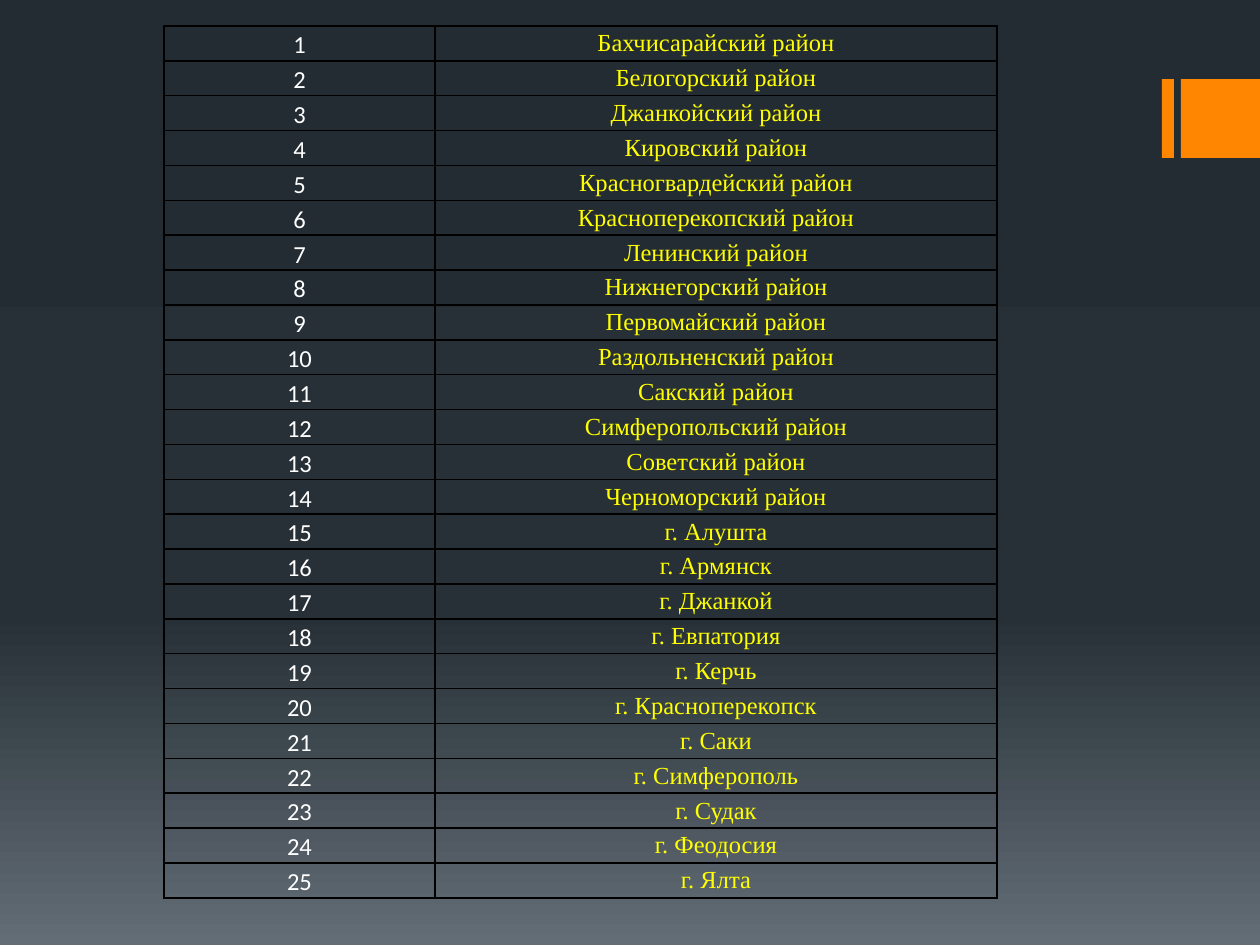
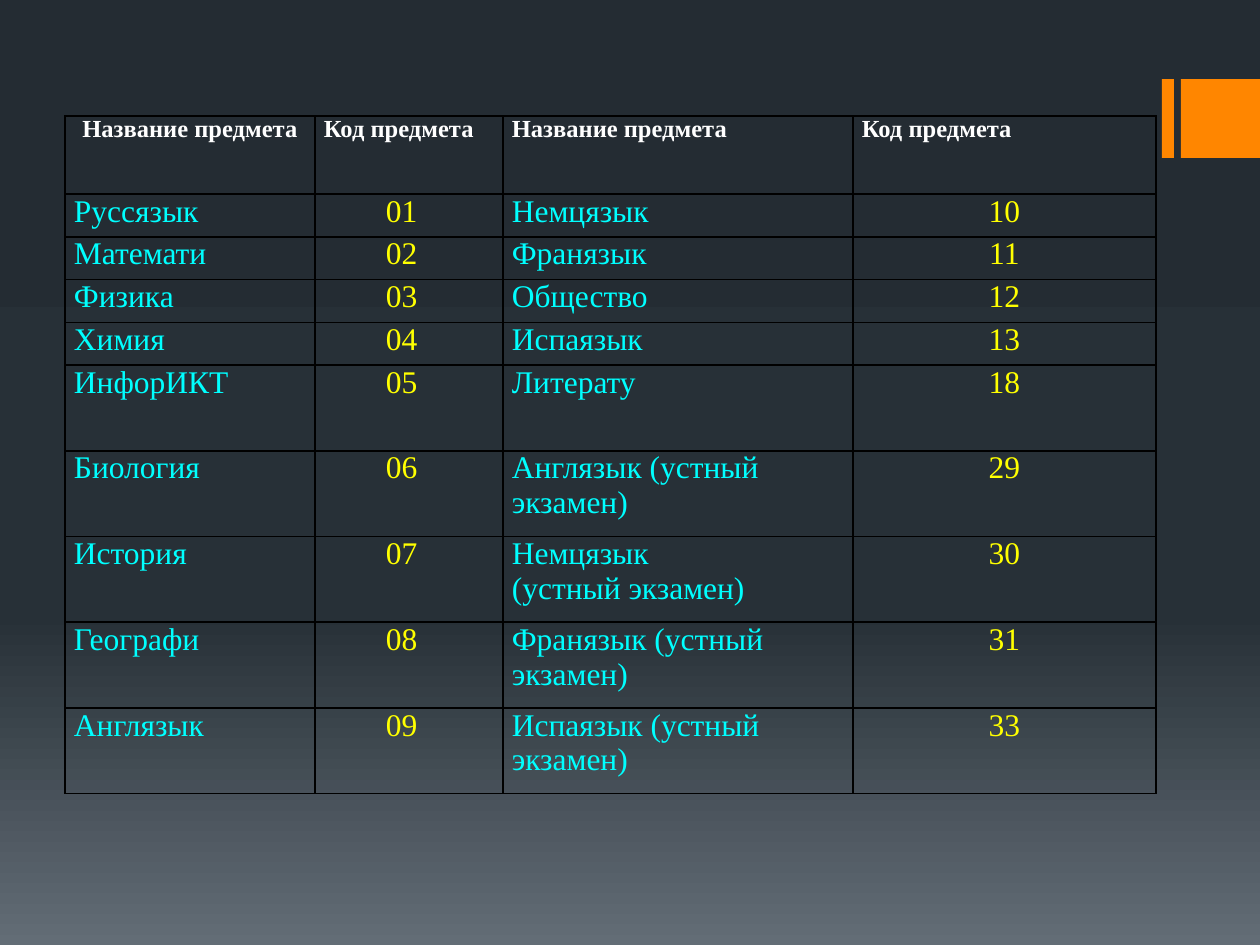
from dataclasses import dataclass

from lxml.etree import SubElement
from pptx import Presentation
from pptx.dml.color import RGBColor
from pptx.enum.shapes import MSO_SHAPE
from pptx.enum.text import PP_ALIGN
from pptx.oxml import parse_xml
from pptx.oxml.ns import nsdecls, qn
from pptx.util import Pt

EMU_PER_PX = 914400 / 126


def px(n):
    return round(n * EMU_PER_PX)


# Shared colours, fonts and sizes
@dataclass(frozen=True)
class Theme:
    backdrop: tuple = ((0, "242C33"), (65, "273037"), (100, "636D76"))
    accent: str = "FF8600"
    border: str = "000000"
    white: str = "FFFFFF"
    yellow: str = "FFFF00"
    cyan: str = "00FFFF"
    sans: str = "Calibri"
    serif: str = "Times New Roman"
    small: int = 14
    large: int = 18


THEME = Theme()


@dataclass(frozen=True)
class TextStyle:
    color: str
    font: str = THEME.serif
    size: int = THEME.small
    bold: bool = False
    align: PP_ALIGN = PP_ALIGN.CENTER
    spacing: float = 1.0
    indent: int = 0


NUMBER = TextStyle(THEME.white, font=THEME.sans, spacing=1.15)
DISTRICT = TextStyle(THEME.yellow, spacing=1.15)
HEAD_CENTER = TextStyle(THEME.white, bold=True)
HEAD = TextStyle(THEME.white, bold=True, align=PP_ALIGN.JUSTIFY)
SUBJECT = TextStyle(THEME.cyan, size=THEME.large, align=PP_ALIGN.JUSTIFY)
ORAL_EXAM = TextStyle(THEME.cyan, size=THEME.large, align=PP_ALIGN.LEFT)
CODE_INDENTED = TextStyle(THEME.yellow, size=THEME.large,
                          align=PP_ALIGN.JUSTIFY, indent=62)
CODE = TextStyle(THEME.yellow, size=THEME.large)

# Content
DISTRICTS = [f"{name} район" for name in (
    "Бахчисарайский", "Белогорский", "Джанкойский", "Кировский",
    "Красногвардейский", "Красноперекопский", "Ленинский", "Нижнегорский",
    "Первомайский", "Раздольненский", "Сакский", "Симферопольский",
    "Советский", "Черноморский")]
CITIES = [f"г. {name}" for name in (
    "Алушта", "Армянск", "Джанкой", "Евпатория", "Керчь", "Красноперекопск",
    "Саки", "Симферополь", "Судак", "Феодосия", "Ялта")]

SUBJECT_HEADS = ["Название предмета", "Код предмета"] * 2
SUBJECTS = [
    ("Руссязык", "01", "Немцязык", "10"),
    ("Математи", "02", "Франязык", "11"),
    ("Физика", "03", "Общество", "12"),
    ("Химия", "04", "Испаязык", "13"),
    ("ИнфорИКТ", "05", "Литерату", "18"),
    ("Биология", "06", "Англязык (устный экзамен)", "29"),
    ("История", "07", "Немцязык\n(устный экзамен)", "30"),
    ("Географи", "08", "Франязык (устный экзамен)", "31"),
    ("Англязык", "09", "Испаязык (устный экзамен)", "33"),
]


# Shared slide parts
def set_backdrop(master):
    fill = master.background.fill
    fill.gradient()
    fill.gradient_angle = 270
    stops = next(master.element.cSld.iter(qn("a:gsLst")))
    for stop in list(stops):
        stops.remove(stop)
    for position, color in THEME.backdrop:
        stop = SubElement(stops, qn("a:gs"), pos=str(position * 1000))
        SubElement(stop, qn("a:srgbClr"), val=color)


def add_bar(s, left, width):
    sp = s.shapes.add_shape(MSO_SHAPE.RECTANGLE, px(left), px(79),
                            px(width), px(79))
    sp.shadow.inherit = False
    sp.fill.solid()
    sp.fill.fore_color.rgb = RGBColor.from_string(THEME.accent)
    sp.line.fill.background()


def add_slide(prs):
    s = prs.slides.add_slide(prs.slide_layouts[6])
    add_bar(s, 1162, 12)
    add_bar(s, 1181, 79)
    return s


# Tables
def set_borders(cell):
    tcPr = cell._tc.get_or_add_tcPr()
    for i, side in enumerate("LRTB"):
        tcPr.insert(i, parse_xml(
            f'<a:ln{side} {nsdecls("a")} w="{Pt(1)}"><a:solidFill>'
            f'<a:srgbClr val="{THEME.border}"/></a:solidFill></a:ln{side}>'))


def write_cell(cell, text, style, margin):
    cell.margin_left = cell.margin_right = px(margin)
    cell.margin_top = cell.margin_bottom = 0
    cell.fill.background()
    set_borders(cell)
    tf = cell.text_frame
    for i, line in enumerate(text.split("\n")):
        p = tf.add_paragraph() if i else tf.paragraphs[0]
        p.alignment = style.align
        p.line_spacing = style.spacing
        if style.indent:
            pPr = p._p.get_or_add_pPr()
            pPr.set("marL", "0")
            pPr.set("indent", str(px(style.indent)))
        r = p.add_run()
        r.text = line
        r.font.name = style.font
        r.font.size = Pt(style.size)
        r.font.bold = style.bold
        r.font.color.rgb = RGBColor.from_string(style.color)


def add_grid(s, left, top, widths, heights, rows, margin):
    """Draw a bordered table; each row is a list of (text, style) pairs."""
    table = s.shapes.add_table(len(rows), len(widths), px(left), px(top),
                               px(sum(widths)), px(sum(heights))).table
    table.first_row = table.horz_banding = False
    for column, width in zip(table.columns, widths):
        column.width = px(width)
    for row, height, items in zip(table.rows, heights, rows):
        row.height = px(height)
        for cell, (text, style) in zip(row.cells, items):
            write_cell(cell, text, style, margin)


# Slides
def add_districts_slide(prs):
    places = DISTRICTS + CITIES
    rows = [[(str(n), NUMBER), (place, DISTRICT)]
            for n, place in enumerate(places, 1)]
    heights = [873 / len(rows)] * len(rows)
    add_grid(add_slide(prs), 164, 26, [271, 562], heights, rows, margin=8)


def add_subjects_slide(prs):
    head_styles = [HEAD_CENTER, HEAD, HEAD, HEAD]
    rows = [list(zip(SUBJECT_HEADS, head_styles))]
    for name, code, name2, code2 in SUBJECTS:
        style2 = ORAL_EXAM if "(" in name2 else SUBJECT
        rows.append([(name, SUBJECT), (code, CODE_INDENTED),
                     (name2, style2), (code2, CODE)])
    row_lines = [1] * 4 + [2] * 5
    line_height = 600 / sum(row_lines)
    heights = [78] + [n * line_height for n in row_lines]
    add_grid(add_slide(prs), 65, 116, [250, 188, 350, 303], heights, rows,
             margin=9)


def main():
    prs = Presentation()
    prs.slide_width, prs.slide_height = px(1260), px(945)
    set_backdrop(prs.slide_master)
    add_districts_slide(prs)
    add_subjects_slide(prs)
    prs.save("out.pptx")


if __name__ == "__main__":
    main()
